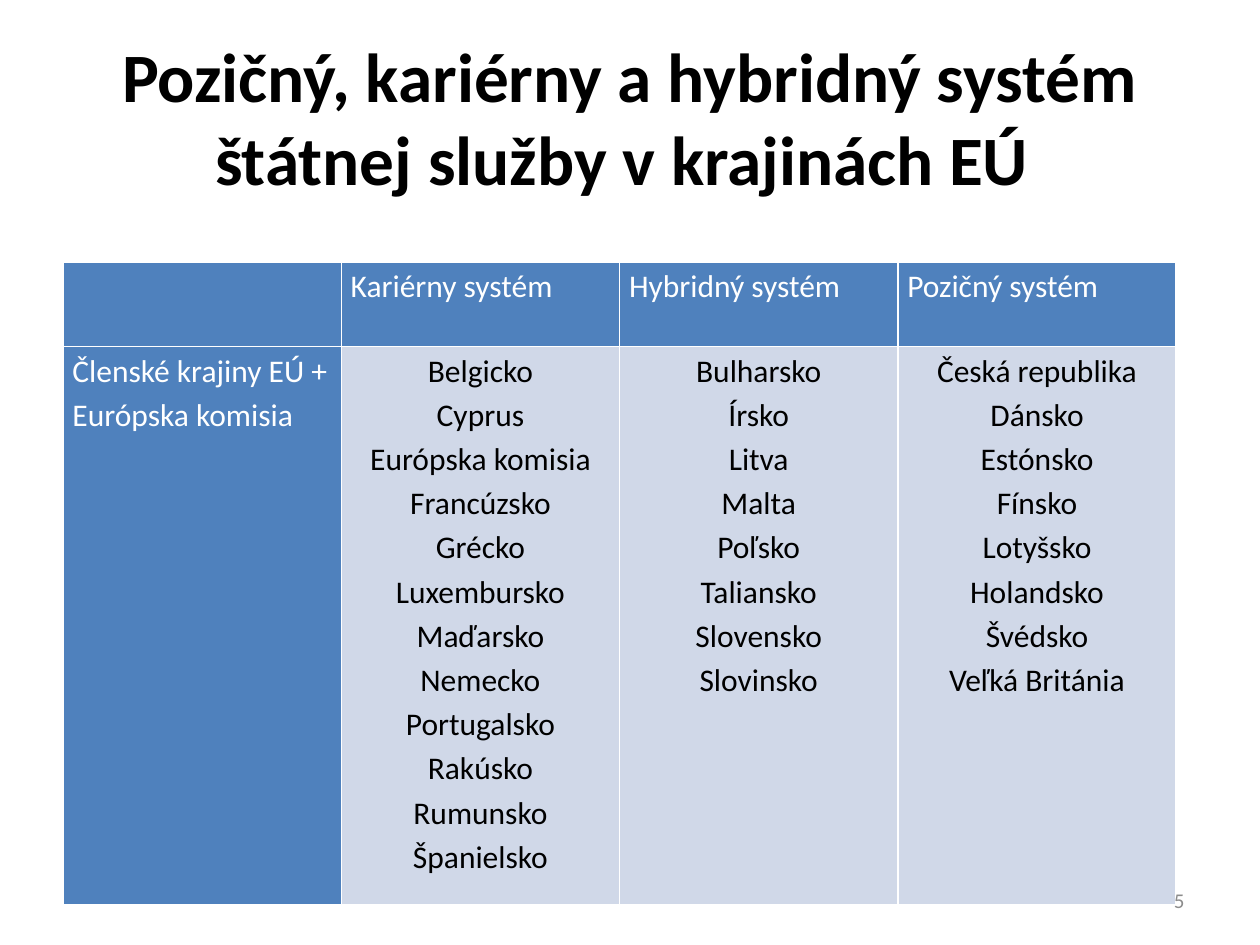
from lxml import etree
from pptx import Presentation
from pptx import util as u
from pptx.dml.color import RGBColor
from pptx.enum import text
from pptx.oxml.ns import qn

# Content
TITLE = "Pozičný, kariérny a hybridný systém štátnej služby v krajinách EÚ "
PAGE_NUMBER = "5"
ROW_LABEL = "Členské krajiny EÚ + Európska komisia"
SYSTEMS = {
    "Kariérny systém": [
        "Belgicko", "Cyprus", "Európska komisia", "Francúzsko", "Grécko", "Luxembursko",
        "Maďarsko", "Nemecko", "Portugalsko", "Rakúsko", "Rumunsko", "Španielsko"],
    "Hybridný systém": [
        "Bulharsko", "Írsko", "Litva", "Malta", "Poľsko", "Taliansko",
        "Slovensko", "Slovinsko"],
    "Pozičný systém": [
        "Česká republika", "Dánsko", "Estónsko", "Fínsko", "Lotyšsko", "Holandsko",
        "Švédsko", "Veľká Británia"],
}

# Format
FONT = "Calibri"
BLACK, WHITE, GREY = "000000", "FFFFFF", "8C8C8C"
BLUE, PALE = "4F81BD", "D0D8E8"
LEFT, CENTER, RIGHT = text.PP_ALIGN.LEFT, text.PP_ALIGN.CENTER, text.PP_ALIGN.RIGHT
COLUMN_WIDTH = 5.61
ROW_HEIGHTS = [1.7, 11.25]


def color(value):
    return RGBColor.from_string(value)


def write(frame, lines, size=18, ink=BLACK, bold=False, align=LEFT, spacing=1.0):
    frame.word_wrap = True
    for index, line in enumerate(lines):
        para = frame.paragraphs[0] if index == 0 else frame.add_paragraph()
        para.alignment = align
        para.line_spacing = spacing
        span = para.add_run()
        span.text = line
        span.font.name = FONT
        span.font.size = u.Pt(size)
        span.font.bold = bold
        span.font.color.rgb = color(ink)


def add_text(page, place, line, **style):
    box = page.shapes.add_textbox(*[u.Cm(length) for length in place])
    box.text_frame.vertical_anchor = text.MSO_ANCHOR.MIDDLE
    write(box.text_frame, [line], **style)


def add_borders(cell, ink=WHITE, width=1):
    properties = cell._tc.get_or_add_tcPr()
    for index, side in enumerate(["lnL", "lnR", "lnT", "lnB"]):
        line = etree.Element(qn("a:" + side), w=str(u.Pt(width)))
        fill = etree.SubElement(line, qn("a:solidFill"))
        etree.SubElement(fill, qn("a:srgbClr"), val=ink)
        properties.insert(index, line)


def fill_cell(cell, lines, fill, **style):
    cell.margin_left = cell.margin_right = u.Cm(0.19)
    cell.margin_top = cell.margin_bottom = 0
    cell.fill.solid()
    cell.fill.fore_color.rgb = color(fill)
    add_borders(cell)
    write(cell.text_frame, lines, spacing=1.15, **style)


deck = Presentation()
deck.slide_width, deck.slide_height = u.Cm(25.4), u.Cm(19.05)
page = deck.slides.add_slide(deck.slide_layouts[6])

# Title
add_text(page, (1.27, 0.76, 22.86, 3.18), TITLE, size=39.6, bold=True, align=CENTER)

# Table: one label column, then one column per system
column_count = len(SYSTEMS) + 1
table = page.shapes.add_table(
    len(ROW_HEIGHTS), column_count, u.Cm(1.27), u.Cm(5.28),
    u.Cm(COLUMN_WIDTH * column_count), u.Cm(sum(ROW_HEIGHTS))).table
for column in table.columns:
    column.width = u.Cm(COLUMN_WIDTH)
for row, height in zip(table.rows, ROW_HEIGHTS):
    row.height = u.Cm(height)

fill_cell(table.cell(0, 0), [], BLUE)
fill_cell(table.cell(1, 0), [ROW_LABEL], BLUE, ink=WHITE)
for number, (system, countries) in enumerate(SYSTEMS.items(), start=1):
    fill_cell(table.cell(0, number), [system], BLUE, ink=WHITE)
    fill_cell(table.cell(1, number), countries, PALE, align=CENTER)

# Page number
add_text(page, (18.2, 17.65, 5.93, 1.01), PAGE_NUMBER, size=12, ink=GREY, align=RIGHT)

deck.save("out.pptx")
